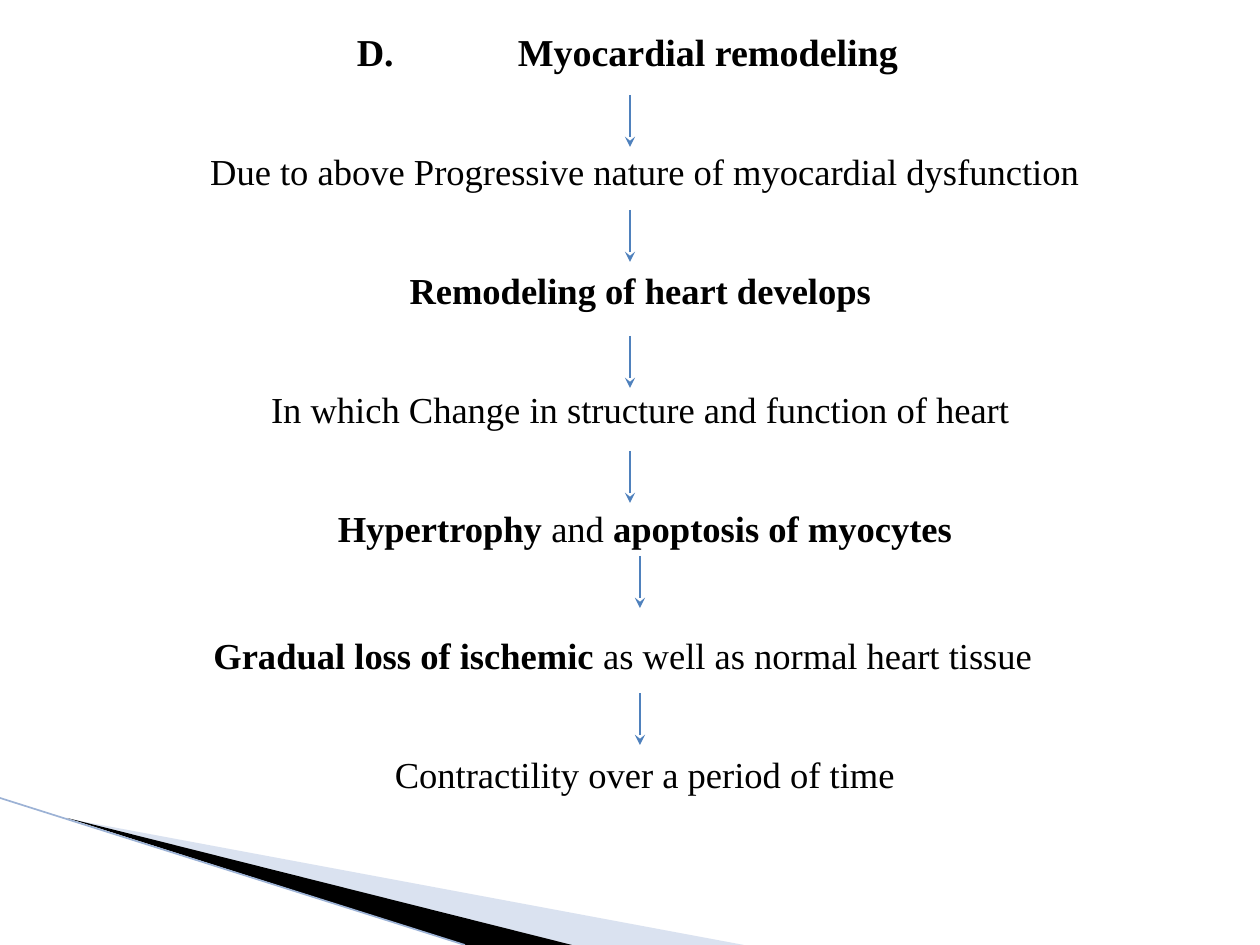
from lxml import etree
from pptx import Presentation, util as u
from pptx.dml.color import RGBColor
from pptx.enum import shapes, text
from pptx.oxml.ns import qn

SCALE = 914400 / 126
COLORS = {"ink": "000000", "arrow": "4F81BD", "wedge": "A4B8DA", "edge": "9CB2D5"}


def px(n):
    return u.Emu(round(n * SCALE))


def draw_line(x1, y1, x2, y2, color, width):
    line = slide.shapes.add_connector(
        shapes.MSO_CONNECTOR.STRAIGHT, px(x1), px(y1), px(x2), px(y2))
    line.line.color.rgb = RGBColor.from_string(COLORS[color])
    line.line.width = u.Pt(width)
    etree.SubElement(line._element.spPr, qn("a:effectLst"))
    return line


prs = Presentation()
prs.slide_width, prs.slide_height = px(1260), px(945)
slide = prs.slides.add_slide(prs.slide_layouts[1])
title = slide.shapes.title._element
title.getparent().remove(title)

wedges = [
    ("wedge", 40, [(69, 819), (744, 945), (571, 945)]),
    ("ink", 100, [(67, 818), (572, 945), (465, 945)]),
]
for color, opacity, corners in wedges:
    outline = slide.shapes.build_freeform(*corners[0], scale=SCALE)
    outline.add_line_segments(corners[1:], close=True)
    wedge = outline.convert_to_shape()
    wedge.shadow.inherit = False
    wedge.fill.solid()
    wedge.fill.fore_color.rgb = RGBColor.from_string(COLORS[color])
    wedge.line.fill.background()
    if opacity < 100:
        tint = wedge._element.spPr.find(".//" + qn("a:srgbClr"))
        etree.SubElement(tint, qn("a:alpha"), val=str(opacity * 1000))
draw_line(0, 798, 465, 945, "edge", 0.95)

steps = [
    (0, -35, 21.7, [("D. \tMyocardial remodeling", True)]),
    (48, 0, 20.9, [("Due to above Progressive nature of myocardial dysfunction", False)]),
    (48, 0, 20.9, [("Remodeling of heart develops ", True)]),
    (48, 0, 20.9, [("In which Change in structure and function of heart ", False)]),
    (48, 0, 20.9, [("Hypertrophy", True), (" and ", False), ("apoptosis of myocytes", True)]),
    (52, -35, 20.9, [("Gradual loss of ischemic ", True),
                     ("as well as normal heart tissue ", False)]),
    (48, 0, 20.9, [("Contractility over a period of time", False)]),
]
pathway = slide.placeholders[1]
pathway.left, pathway.top, pathway.width, pathway.height = px(53), px(31), px(1134), px(797)
frame = pathway.text_frame
frame.word_wrap = True
frame.auto_size = text.MSO_AUTO_SIZE.NONE
frame.vertical_anchor = text.MSO_ANCHOR.TOP
for i, (gap, indent, size, parts) in enumerate(steps):
    step = frame.paragraphs[0] if i == 0 else frame.add_paragraph()
    layout = {"alignment": text.PP_ALIGN.CENTER, "line_spacing": 0.8, "space_before": u.Pt(gap)}
    for name, value in layout.items():
        setattr(step, name, value)
    props = step._p.get_or_add_pPr()
    for name, length in {"marL": 50, "indent": indent, "defTabSz": 126}.items():
        props.set(name, str(px(length)))
    etree.SubElement(props, qn("a:buNone"))
    for words, bold in parts:
        run = step.add_run()
        run.text = words
        style = {"name": "Times New Roman", "size": u.Pt(size), "bold": bold}
        for name, value in style.items():
            setattr(run.font, name, value)
        run.font.color.rgb = RGBColor.from_string(COLORS["ink"])

arrow_starts = [(630, 95), (630, 210), (630, 336), (630, 451), (640, 556), (640, 693)]
for x, y in arrow_starts:
    arrow = draw_line(x, y, x, y + 52, "arrow", 0.79)
    etree.SubElement(arrow.line._get_or_add_ln(), qn("a:tailEnd"), type="stealth")

prs.save("out.pptx")
